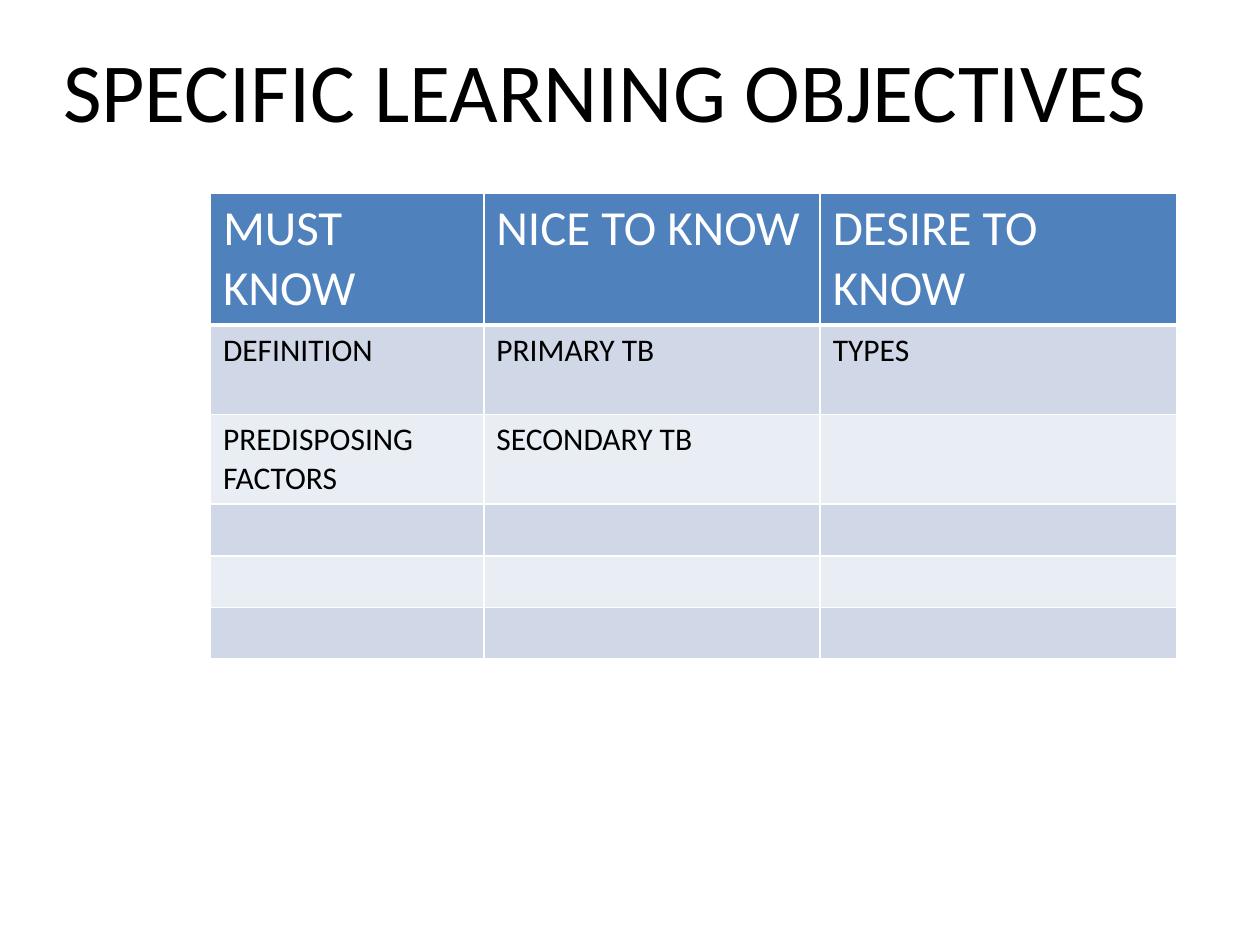
from pptx import Presentation
from pptx import util as u
from pptx.dml.color import RGBColor
from pptx.enum import text
from pptx.oxml import parse_xml
from pptx.oxml.ns import nsdecls


def style(run, size, color):
    run.font.name = "Calibri"
    run.font.size = u.Pt(size)
    run.font.bold = False
    run.font.color.rgb = RGBColor.from_string(color)


def edge(cell, side, width, color):
    cell._tc.get_or_add_tcPr().append(parse_xml(
        f'<a:ln{side} {nsdecls("a")} w="{u.Pt(width)}"><a:solidFill>'
        f'<a:srgbClr val="{color}"/></a:solidFill></a:ln{side}>'))


deck = Presentation()
deck.slide_width, deck.slide_height = u.Inches(10), u.Inches(7.5)
slide = deck.slides.add_slide(deck.slide_layouts[5])

# Title
title = slide.shapes.title
title.left, title.top = u.Inches(0.5), u.Inches(0.3)
title.width, title.height = u.Inches(9), u.Inches(0.81)
frame = title.text_frame
frame.auto_size = text.MSO_AUTO_SIZE.NONE
frame.margin_left = frame.margin_right = 0
frame.margin_top = frame.margin_bottom = 0
frame.vertical_anchor = text.MSO_ANCHOR.MIDDLE
para = frame.paragraphs[0]
para.alignment = text.PP_ALIGN.LEFT
style_run = para.add_run()
style_run.text = "SPECIFIC LEARNING OBJECTIVES"
style(style_run, 48, "000000")

# Objectives table
rows = [
    ["MUST KNOW", "NICE TO KNOW", "DESIRE TO KNOW"],
    ["DEFINITION", "PRIMARY TB", "TYPES"],
    ["PREDISPOSING FACTORS", "SECONDARY TB", ""],
] + [[""] * 3] * 3
widths = [2.17, 2.67, 2.83]
heights = [1.05, 0.71, 0.71] + [0.41] * 3
table = slide.shapes.add_table(
    len(rows), len(widths), u.Inches(1.67), u.Inches(1.53),
    u.Inches(sum(widths)), u.Inches(sum(heights))).table
for col, width in zip(table.columns, widths):
    col.width = u.Inches(width)

for i, (words, height) in enumerate(zip(rows, heights)):
    table.rows[i].height = u.Inches(height)
    head = i == 0
    fill = "4F81BD" if head else ("E9EDF4", "D0D8E8")[i % 2]
    for j, word in enumerate(words):
        cell = table.cell(i, j)
        # Borders come before the fill; the header rule is heavier
        for side in "LRTB":
            heavy = (head and side == "B") or (i == 1 and side == "T")
            edge(cell, side, 3 if heavy else 1, "FFFFFF")
        cell.fill.solid()
        cell.fill.fore_color.rgb = RGBColor.from_string(fill)
        if word:
            run = cell.text_frame.paragraphs[0].add_run()
            run.text = word
            style(run, 28 if head else 18, "FFFFFF" if head else "000000")

deck.save("out.pptx")
